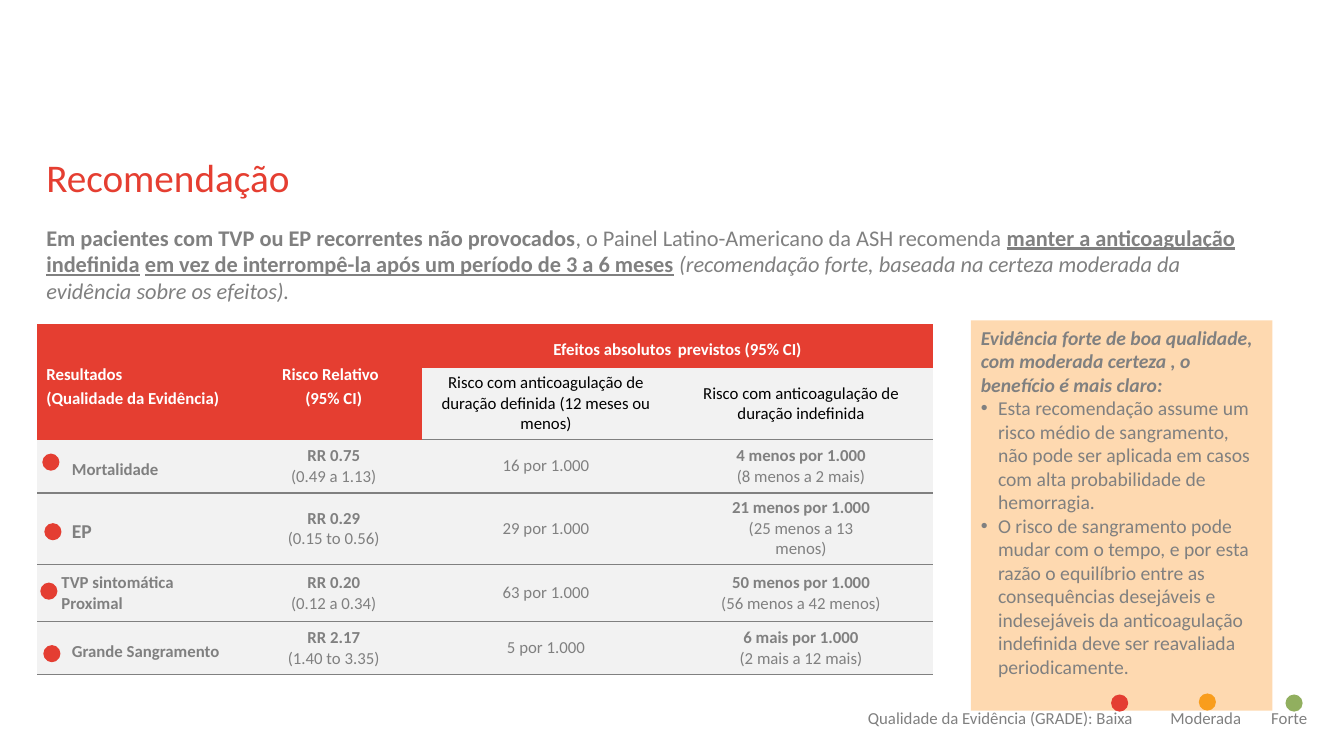
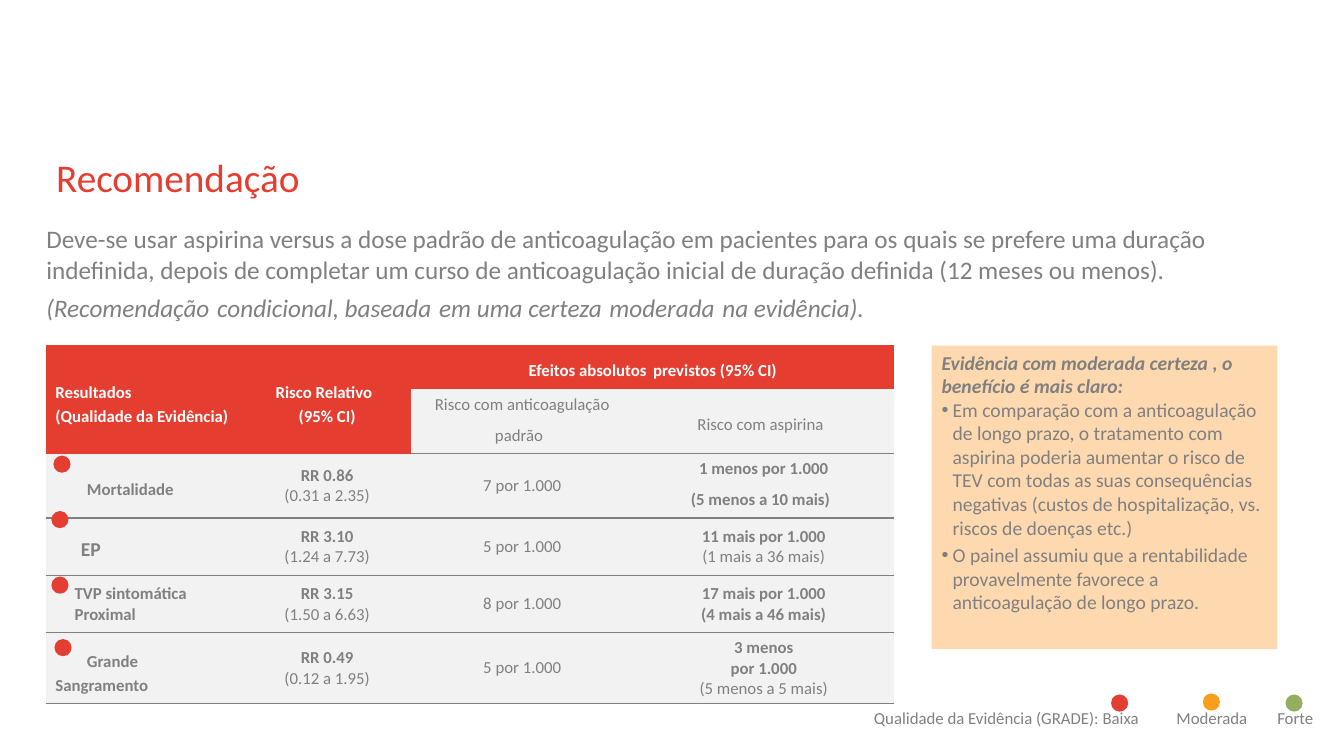
"""Build two recommendation slides with evidence tables, quality dots and a remarks panel."""
from dataclasses import dataclass

import pptx
import pptx.dml.color
import pptx.enum.shapes
import pptx.enum.text
import pptx.oxml.ns
import pptx.util
from lxml import etree

Inches = pptx.util.Inches
Pt = pptx.util.Pt
ALIGN = pptx.enum.text.PP_ALIGN
SHAPES = pptx.enum.shapes.MSO_SHAPE

FONT = "Calibri"
COLORS = {
    "title": "E53E31", "text": "808080", "white": "FFFFFF", "black": "000000",
    "cell": "F2F2F2", "panel": "FED9B0",
    "low": "E43E32", "moderate": "F99D1C", "strong": "91AF5F",
}
DOT_SIZE = 0.17
LEGEND_TABS = (2.93, 3.97)


@dataclass(frozen=True)
class Span:
    text: str
    size: float = 12
    color: str = "text"
    bold: bool = False
    italic: bool = False
    underline: bool = False


@dataclass(frozen=True)
class Para:
    spans: tuple[Span, ...]
    align: ALIGN = ALIGN.LEFT
    indent: float = 0
    bullet: float = 0
    after: float = 0
    tabs: tuple[float, ...] = ()


@dataclass(frozen=True)
class Outcome:
    label: tuple[Para, ...]
    ratio: str
    interval: str
    control: str
    effect: tuple[Para, ...]


@dataclass(frozen=True)
class EvidenceTable:
    left: float
    top: float
    columns: tuple[float, ...]
    rows: tuple[float, ...]
    arms: tuple[Para, Para]
    outcomes: tuple[Outcome, ...]


@dataclass(frozen=True)
class Panel:
    left: float
    top: float
    width: float
    height: float
    paras: tuple[Para, ...]


@dataclass(frozen=True)
class Recommendation:
    title_inset: float
    body: Para
    table: EvidenceTable
    panel: Panel
    dots: tuple[tuple[float, float], ...]
    legend_left: float
    moderate_left: float


WIDE_SPACE = Span(" ", 20)


def rgb(name: str) -> pptx.dml.color.RGBColor:
    """Return a named colour."""
    return pptx.dml.color.RGBColor.from_string(COLORS[name])


def centered(*spans: Span) -> Para:
    """Return a centred paragraph."""
    return Para(spans, ALIGN.CENTER)


def strong(text: str) -> Para:
    """Return a centred bold line."""
    return centered(Span(text, bold=True))


def plain(text: str, color: str = "text") -> Para:
    """Return a centred regular line."""
    return centered(Span(text, color=color))


def heading(text: str) -> Span:
    """Return a span for the red header cells."""
    return Span(text, color="white", bold=True)


def label(text: str, indent: float, size: float = 12) -> Para:
    """Return an outcome name on a tall line."""
    return Para((WIDE_SPACE, Span(text, size, bold=True)), indent=indent)


def short_label(text: str, indent: float = 0) -> Para:
    """Return an outcome name on a line of normal height."""
    return Para((Span(text, bold=True),), indent=indent)


def lead(text: str) -> Para:
    """Return the opening line of a panel."""
    return Para((Span(text, 14, bold=True, italic=True),))


def remark(text: str, bullet: float, after: float = 0) -> Para:
    """Return a bulleted panel line."""
    return Para((Span(text, 14),), bullet=bullet, after=after)


def add_child(parent, tag: str, **attributes: str):
    """Append a DrawingML element to a parent."""
    return etree.SubElement(parent, pptx.oxml.ns.qn(tag), attributes)


def write(frame, paras: tuple[Para, ...]) -> None:
    """Fill a text frame with styled paragraphs."""
    frame.word_wrap = True
    for index, para in enumerate(paras):
        paragraph = frame.paragraphs[0] if index == 0 else frame.add_paragraph()
        paragraph.alignment = para.align
        paragraph.space_after = Pt(para.after)
        properties = paragraph._p.get_or_add_pPr()
        properties.set("marL", str(Inches(para.bullet)))
        properties.set("indent", str(Inches(para.indent - para.bullet)))
        if para.bullet:
            add_child(properties, "a:buFont", typeface="Arial")
            add_child(properties, "a:buChar", char="•")
        if para.tabs:
            stops = add_child(properties, "a:tabLst")
            for stop in para.tabs:
                add_child(stops, "a:tab", pos=str(Inches(stop)), algn="l")
        for span in para.spans:
            run = paragraph.add_run()
            run.text = span.text
            font = run.font
            font.name, font.size = FONT, Pt(span.size)
            font.bold, font.italic, font.underline = span.bold, span.italic, span.underline
            font.color.rgb = rgb(span.color)


def add_text(page, left: float, top: float, width: float, height: float,
             paras: tuple[Para, ...], inset: float = 0.1, top_inset: float = 0.05) -> None:
    """Add a text box."""
    frame = page.shapes.add_textbox(Inches(left), Inches(top), Inches(width), Inches(height)).text_frame
    frame.margin_left, frame.margin_top = Inches(inset), Inches(top_inset)
    frame.margin_right = Inches(inset)
    write(frame, paras)


def add_filled(page, kind: SHAPES, left: float, top: float, width: float, height: float, color: str):
    """Add a flat shape without outline."""
    shape = page.shapes.add_shape(kind, Inches(left), Inches(top), Inches(width), Inches(height))
    shape.shadow.inherit = False
    shape.fill.solid()
    shape.fill.fore_color.rgb = rgb(color)
    shape.line.fill.background()
    return shape


def add_dot(page, left: float, top: float, color: str = "low") -> None:
    """Add a quality dot."""
    add_filled(page, SHAPES.OVAL, left, top, DOT_SIZE, DOT_SIZE, color)


def has_rule_above(row: int, column: int) -> bool:
    """Tell whether a grey rule runs above a cell."""
    return row > 2 or (row == 2 and column > 1)


def style_cell(cell, row: int, column: int) -> None:
    """Set the borders, fill and insets of a cell."""
    properties = cell._tc.get_or_add_tcPr()
    ruled = {"a:lnL": False, "a:lnR": False,
             "a:lnT": has_rule_above(row, column), "a:lnB": has_rule_above(row + 1, column)}
    for tag, visible in ruled.items():
        line = add_child(properties, tag, w=str(Pt(1)))
        if visible:
            add_child(add_child(line, "a:solidFill"), "a:srgbClr", val=COLORS["text"])
        else:
            add_child(line, "a:noFill")
    header = row == 0 or (row == 1 and column < 2)
    cell.fill.solid()
    cell.fill.fore_color.rgb = rgb("title" if header else "cell")
    cell.vertical_anchor = pptx.enum.text.MSO_ANCHOR.MIDDLE
    cell.margin_left = cell.margin_right = Inches(0.09)
    cell.margin_top = cell.margin_bottom = Inches(0.05)


def add_evidence(page, data: EvidenceTable) -> None:
    """Add the table of outcomes."""
    table = page.shapes.add_table(
        len(data.rows), len(data.columns), Inches(data.left), Inches(data.top),
        Inches(sum(data.columns)), Inches(sum(data.rows))).table
    for column, width in zip(table.columns, data.columns):
        column.width = Inches(width)
    for row, height in zip(table.rows, data.rows):
        row.height = Inches(height)
    for row in range(len(data.rows)):
        for column in range(len(data.columns)):
            style_cell(table.cell(row, column), row, column)
    for column in (0, 1):
        table.cell(0, column).merge(table.cell(1, column))
    table.cell(0, 2).merge(table.cell(0, 3))
    headers = (
        (Para((heading("Resultados"), WIDE_SPACE)), Para((heading("(Qualidade da Evidência)"),))),
        (centered(heading("Risco Relativo"), WIDE_SPACE), centered(heading("(95% CI)"))),
        (centered(heading("Efeitos absolutos"), WIDE_SPACE, heading("previstos (95% CI)")),),
    )
    for column, paras in enumerate(headers):
        write(table.cell(0, column).text_frame, paras)
    for column, arm in enumerate(data.arms, start=2):
        write(table.cell(1, column).text_frame, (arm,))
    for row, item in enumerate(data.outcomes, start=2):
        contents = (item.label, (strong(item.ratio), plain(item.interval)),
                    (plain(item.control),), item.effect)
        for column, paras in enumerate(contents):
            write(table.cell(row, column).text_frame, paras)


def add_recommendation(deck, data: Recommendation) -> None:
    """Add one complete slide."""
    page = deck.slides.add_slide(deck.slide_layouts[6])
    add_evidence(page, data.table)
    panel = data.panel
    box = add_filled(page, SHAPES.RECTANGLE, panel.left, panel.top, panel.width, panel.height, "panel")
    box.text_frame.vertical_anchor = pptx.enum.text.MSO_ANCHOR.TOP
    write(box.text_frame, panel.paras)
    for left, top in data.dots:
        add_dot(page, left, top)
    legend = Para((Span("Qualidade da Evidência (GRADE): Baixa\tModerada\tForte"),), tabs=LEGEND_TABS)
    add_text(page, data.legend_left, 6.97, 4.76, 0.3, (legend,))
    add_dot(page, 11.02, 6.89)
    add_dot(page, data.moderate_left, 6.88, "moderate")
    add_dot(page, 12.75, 6.89, "strong")
    add_text(page, 0.46, 1.47, 12, 0.78, (Para((Span("Recomendação", 28, "title"),)),), data.title_inset)
    add_text(page, 0.46, 2.22, 12, 1.1, (data.body,), 0, 0)


INDEFINITE = Recommendation(
    0,
    Para((
        Span("Em pacientes com TVP ou EP recorrentes não provocados", 16, bold=True),
        Span(", o Painel Latino-Americano da ASH recomenda ", 16),
        Span("manter a anticoagulação indefinida", 16, bold=True, underline=True),
        Span(" ", 16),
        Span("em vez de interrompê-la após um período de 3 a 6 meses", 16, bold=True, underline=True),
        Span(" (recomendação forte, baseada na certeza moderada da evidência sobre os efeitos).", 16, italic=True))),
    EvidenceTable(
        0.37, 3.21, (2.06, 1.76, 2.45, 2.61), (0.44, 0.69, 0.53, 0.7, 0.57, 0.52),
        (plain("Risco com anticoagulação de duração definida (12 meses ou menos)", "black"),
         plain("Risco com anticoagulação de duração indefinida", "black")),
        (Outcome((label("Mortalidade", 0.19),), "RR 0.75", "(0.49 a 1.13)", "16 por 1.000",
                 (strong("4 menos por 1.000"), plain("(8 menos a 2 mais)"))),
         Outcome((label("EP", 0.19, 14),), "RR 0.29", "(0.15 to 0.56)", "29 por 1.000",
                 (strong("21 menos por 1.000"), plain("(25 menos a 13"), plain("menos)"))),
         Outcome((short_label("TVP sintomática", 0.15), short_label("Proximal", 0.15)),
                 "RR 0.20", "(0.12 a 0.34)", "63 por 1.000",
                 (strong("50 menos por 1.000"), plain("(56 menos a 42 menos)"))),
         Outcome((label("Grande Sangramento", 0.19),), "RR 2.17", "(1.40 to 3.35)", "5 por 1.000",
                 (strong("6 mais por 1.000"), plain("(2 mais a 12 mais)"))))),
    Panel(9.63, 3.18, 2.99, 3.87, (
        lead("Evidência forte de boa qualidade, com moderada certeza , o benefício é mais claro:"),
        remark("Esta recomendação assume um risco médio de sangramento, não pode ser aplicada em casos com alta probabilidade de hemorragia.", 0.17),
        remark("O risco de sangramento pode mudar com o tempo, e por esta razão o equilíbrio entre as consequências desejáveis e indesejáveis da anticoagulação indefinida deve ser reavaliada periodicamente.", 0.17))),
    ((0.42, 4.5), (0.44, 5.19), (0.4, 5.78), (0.43, 6.4)), 8.51, 11.89)

GAP = Span(" ", 24)
ASPIRIN = Recommendation(
    0.1,
    Para((
        Span("Deve-se usar aspirina versus a dose padrão de anticoagulação em pacientes para os quais se prefere uma duração indefinida, depois de completar um curso de anticoagulação inicial de duração definida (12 meses ou menos). ", 18),
        Span("(Recomendação", 18, italic=True), GAP, Span("condicional, baseada", 18, italic=True), GAP,
        Span("em uma certeza", 18, italic=True), GAP, Span("moderada", 18, italic=True), GAP,
        Span("na evidência).", 18, italic=True))),
    EvidenceTable(
        0.46, 3.42, (1.95, 1.67, 2.2, 2.59), (0.44, 0.64, 0.64, 0.57, 0.57, 0.7),
        (centered(Span("Risco com anticoagulação padrão"), WIDE_SPACE),
         centered(Span("Risco com aspirina"), WIDE_SPACE)),
        (Outcome((label("Mortalidade", 0.25),), "RR 0.86", "(0.31 a 2.35)", "7 por 1.000",
                 (strong("1 menos por 1.000"), centered(Span("(5 menos a 10 mais)", bold=True), WIDE_SPACE))),
         Outcome((label("EP", 0.19, 14),), "RR 3.10", "(1.24 a 7.73)", "5 por 1.000",
                 (strong("11 mais por 1.000"), plain("(1 mais a 36 mais)"))),
         Outcome((short_label("TVP sintomática", 0.19), short_label("Proximal", 0.19)),
                 "RR 3.15", "(1.50 a 6.63)", "8 por 1.000",
                 (strong("17 mais por 1.000"), strong("(4 mais a 46 mais)"))),
         Outcome((label("Grande", 0.25), short_label("Sangramento")), "RR 0.49", "(0.12 a 1.95)", "5 por 1.000",
                 (strong("3 menos"), strong("por 1.000"), plain("(5 menos a 5 mais)"))))),
    Panel(9.24, 3.43, 3.43, 3.01, (
        lead("Evidência com moderada certeza , o benefício é mais claro:"),
        remark("Em comparação com a anticoagulação de longo prazo, o tratamento com aspirina poderia aumentar o risco de TEV com todas as suas consequências negativas (custos de hospitalização, vs. riscos de doenças etc.)", 0.11, 3),
        remark("O painel assumiu que a rentabilidade provavelmente favorece a anticoagulação de longo prazo.", 0.11, 3))),
    ((0.53, 4.52), (0.51, 5.07), (0.51, 5.72), (0.54, 6.34)), 8.57, 11.93)


def main() -> None:
    """Build and save the deck."""
    deck = pptx.Presentation()
    deck.slide_width, deck.slide_height = Inches(13.33), Inches(7.5)
    for recommendation in (INDEFINITE, ASPIRIN):
        add_recommendation(deck, recommendation)
    deck.save("out.pptx")


if __name__ == "__main__":
    main()
